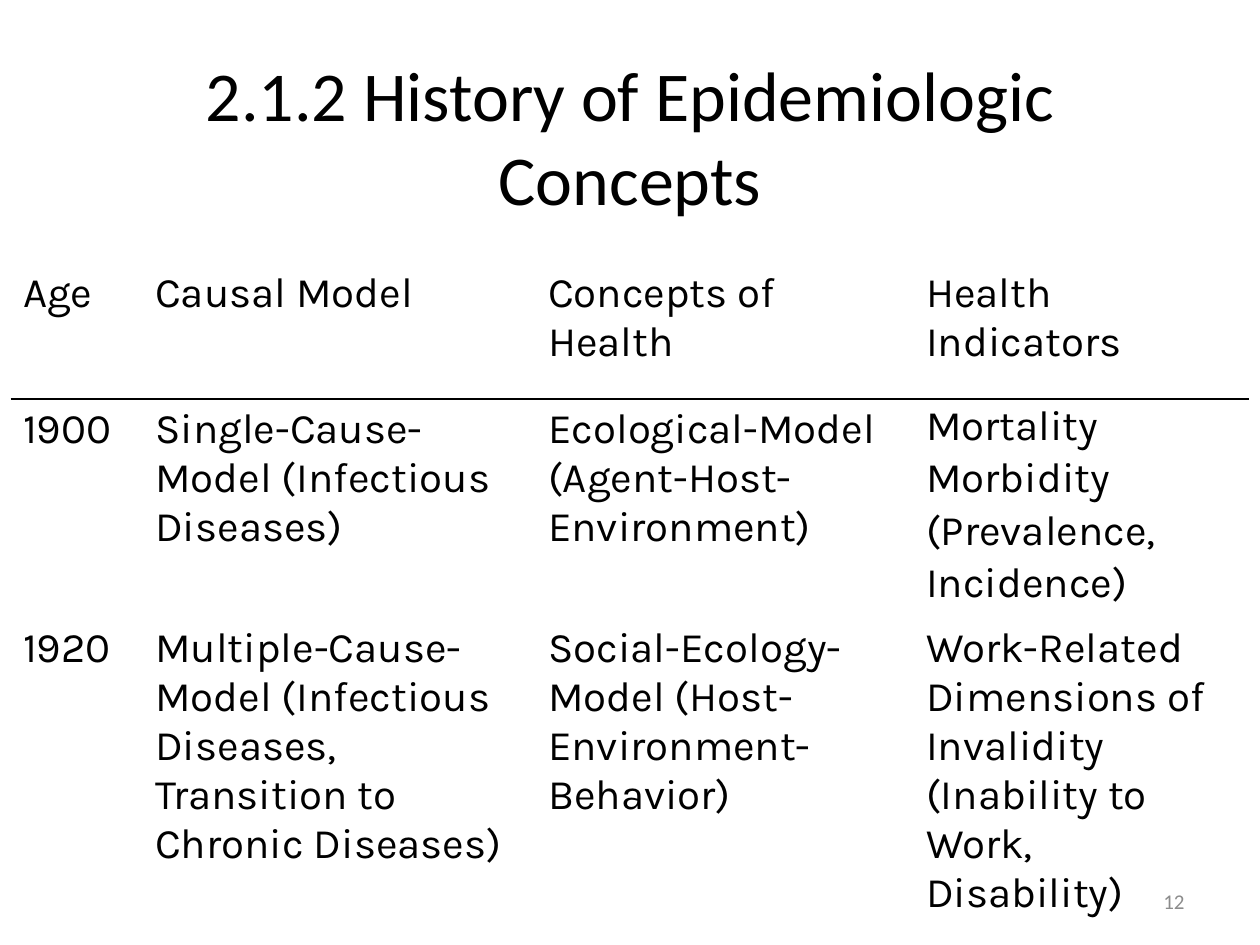
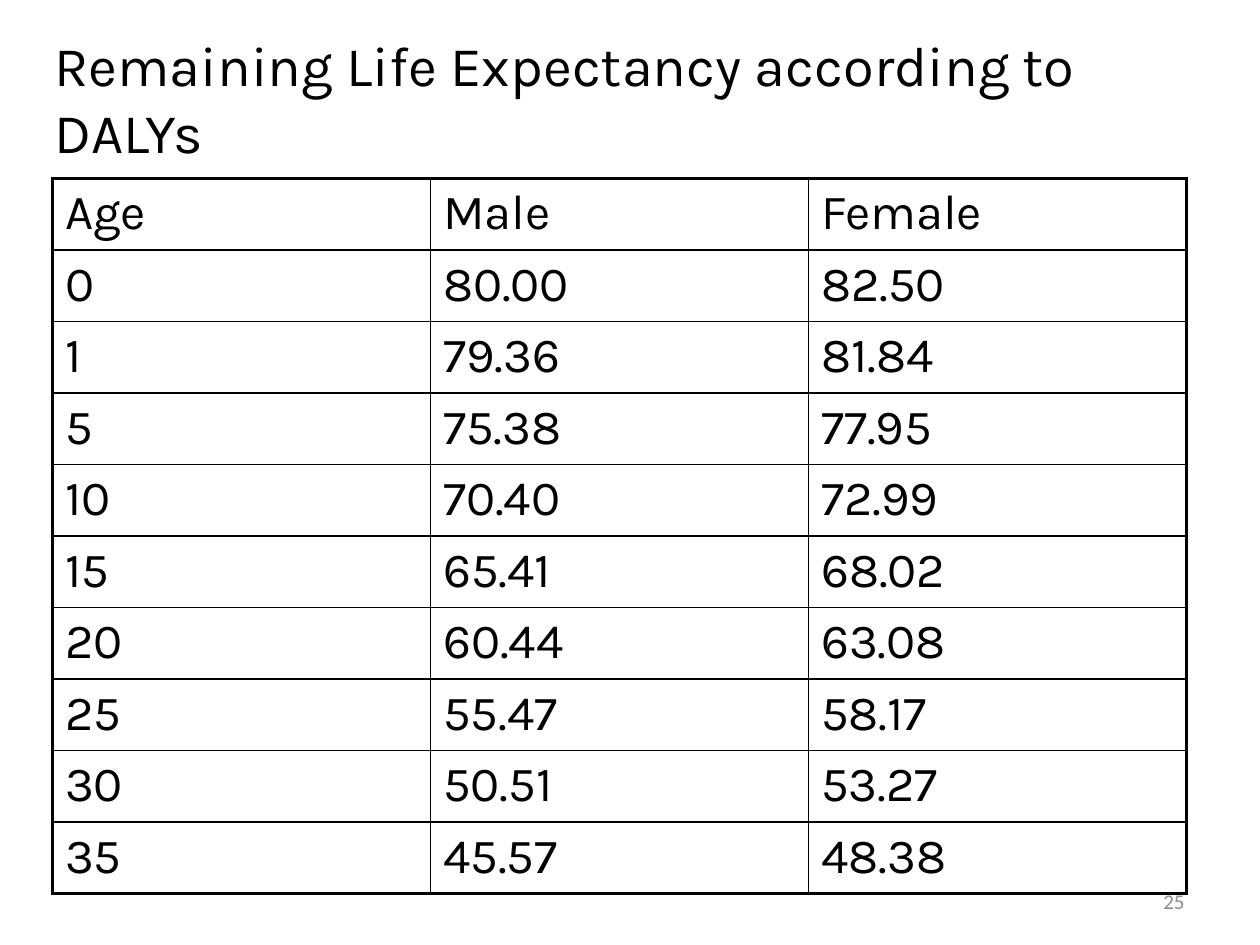
from dataclasses import dataclass

import pptx
import pptx.dml.color
import pptx.enum.text
import pptx.oxml.ns
import pptx.util
from lxml import etree

Pt = pptx.util.Pt
Align = pptx.enum.text.PP_ALIGN
Anchor = pptx.enum.text.MSO_ANCHOR


@dataclass(frozen=True)
class Theme:
    ink: str = "000000"
    muted: str = "8C8C8C"
    heading_font: str = "Calibri"
    body_font: str = "Karla"
    heading_size: float = 40
    caption_size: float = 32
    concept_size: float = 24
    figure_size: float = 28
    number_size: float = 12
    thin: float = 1
    thick: float = 2.25


THEME = Theme()

CONCEPT_TITLE = "2.1.2 History of Epidemiologic Concepts"
CONCEPTS = [
    ("Age", "Causal Model", "Concepts of Health", "Health Indicators"),
    (
        "1900",
        "Single-Cause-Model (Infectious Diseases)",
        "Ecological-Model (Agent-Host-Environment)",
        ["Mortality", "Morbidity", "(Prevalence,", "Incidence)"],
    ),
    (
        "1920",
        "Multiple-Cause-Model (Infectious Diseases, Transition to Chronic Diseases)",
        "Social-Ecology-Model (Host-Environment-Behavior)",
        "Work-Related Dimensions of Invalidity (Inability to Work, Disability)",
    ),
]

EXPECTANCY_TITLE = "Remaining Life Expectancy according to DALYs"
EXPECTANCY = [
    ("Age", "Male", "Female"),
    ("0", "80.00", "82.50"),
    ("1", "79.36", "81.84"),
    ("5", "75.38", "77.95"),
    ("10", "70.40", "72.99"),
    ("15", "65.41", "68.02"),
    ("20", "60.44", "63.08"),
    ("25", "55.47", "58.17"),
    ("30", "50.51", "53.27"),
    ("35", "45.57", "48.38"),
]


def style_paragraph(para, font, size, color=THEME.ink, align=Align.LEFT):
    para.alignment = align
    para.font.name = font
    para.font.size = Pt(size)
    para.font.color.rgb = pptx.dml.color.RGBColor.from_string(color)


def add_text(page, text, area, anchor, **style):
    box = page.shapes.add_textbox(*map(Pt, area))
    frame = box.text_frame
    frame.word_wrap = True
    frame.vertical_anchor = anchor
    frame.text = text
    style_paragraph(frame.paragraphs[0], **style)


def add_page(deck, number):
    page = deck.slides.add_slide(deck.slide_layouts[6])
    add_text(page, str(number), (516, 500.5, 168, 28.75), Anchor.MIDDLE,
             font=THEME.heading_font, size=THEME.number_size,
             color=THEME.muted, align=Align.RIGHT)
    return page


def set_borders(cell, widths):
    properties = cell._tc.get_or_add_tcPr()
    qn = pptx.oxml.ns.qn
    for side, width in zip("LRTB", widths):
        line = etree.SubElement(properties, qn(f"a:ln{side}"), w=str(Pt(width)))
        if width:
            fill = etree.SubElement(line, qn("a:solidFill"))
            etree.SubElement(fill, qn("a:srgbClr"), val=THEME.ink)
        else:
            etree.SubElement(line, qn("a:noFill"))


def fill_cell(cell, content, size):
    lines = content if isinstance(content, list) else [content]
    cell.text = "\n".join(lines)
    for index, para in enumerate(cell.text_frame.paragraphs):
        style_paragraph(para, THEME.body_font, size)
        if len(lines) > 1:
            para.line_spacing = 0.9
        if index:
            para.space_before = Pt(0.2 * size)


def add_grid(page, rows, left, top, widths, heights, size, borders):
    frame = page.shapes.add_table(
        len(rows), len(widths), Pt(left), Pt(top), Pt(sum(widths)), Pt(sum(heights)))
    table = frame.table
    table.first_row = False
    table.horz_banding = False
    for column, width in zip(table.columns, widths):
        column.width = Pt(width)
    for r, (values, height) in enumerate(zip(rows, heights)):
        table.rows[r].height = Pt(height)
        for c, value in enumerate(values):
            cell = table.cell(r, c)
            fill_cell(cell, value, size)
            set_borders(cell, borders(r, c))
            cell.fill.background()


def header_rule(row, column):
    return 0, 0, THEME.thin * (row == 1), THEME.thin * (row == 0)


def boxed_grid(row, column):
    last_row, last_column = len(EXPECTANCY) - 1, len(EXPECTANCY[0]) - 1
    outer = (column == 0, column == last_column, row == 0, row == last_row)
    return [THEME.thick if edge else THEME.thin for edge in outer]


def build_concepts(deck):
    page = add_page(deck, 12)
    add_text(page, CONCEPT_TITLE, (36, 23, 648, 108.75), Anchor.MIDDLE,
             font=THEME.heading_font, size=THEME.heading_size, align=Align.CENTER)
    add_grid(page, CONCEPTS, 6, 150, (75.5, 224.5, 216, 192), (78, 122, 157),
             THEME.concept_size, header_rule)


def build_expectancy(deck):
    page = add_page(deck, 25)
    add_text(page, EXPECTANCY_TITLE, (24, 14, 682, 46), Anchor.TOP,
             font=THEME.body_font, size=THEME.caption_size)
    add_grid(page, EXPECTANCY, 30, 102, [216] * 3, [40.8] * len(EXPECTANCY),
             THEME.figure_size, boxed_grid)


def main():
    deck = pptx.Presentation()
    deck.slide_width, deck.slide_height = Pt(720), Pt(540)
    build_concepts(deck)
    build_expectancy(deck)
    deck.save("out.pptx")


if __name__ == "__main__":
    main()
